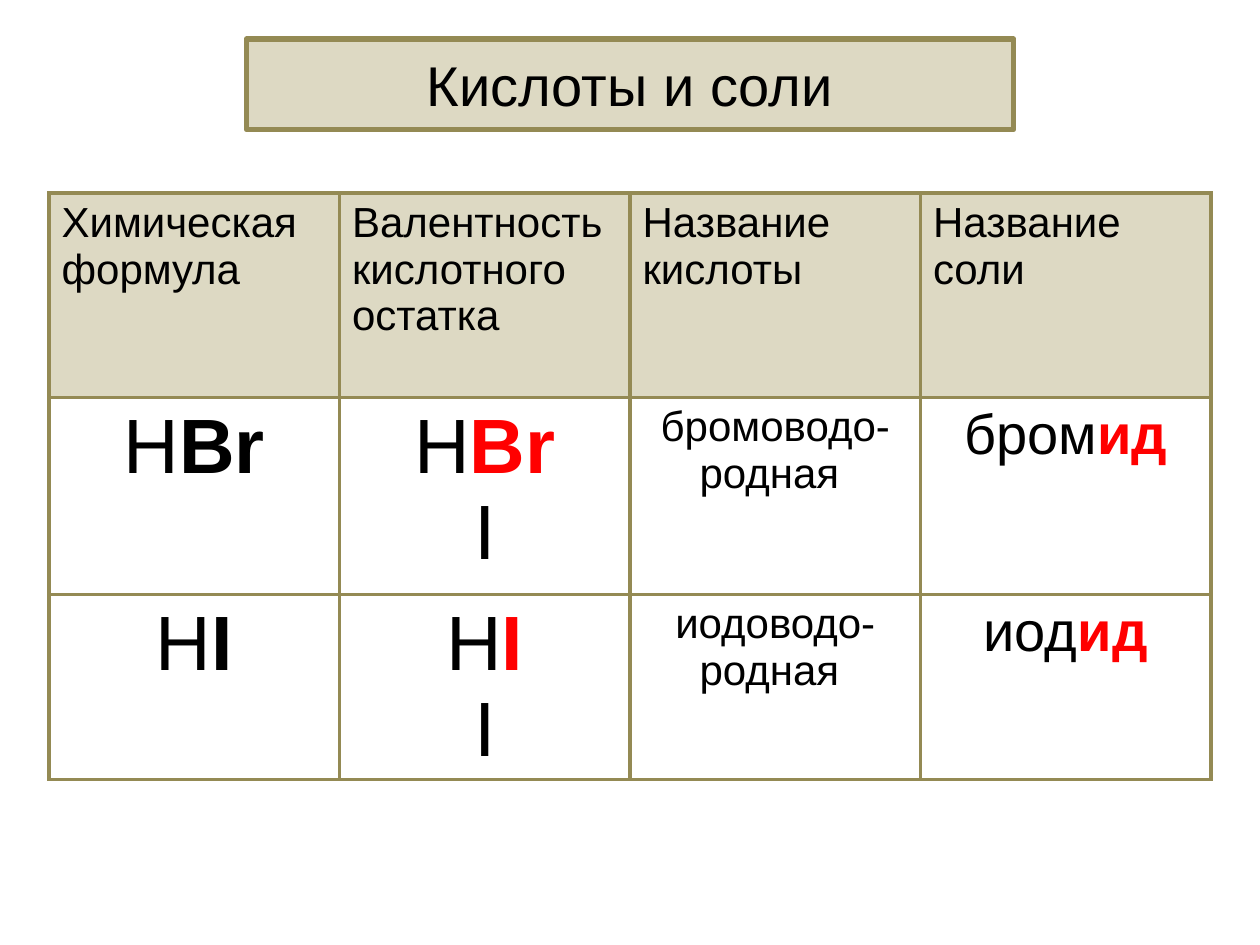
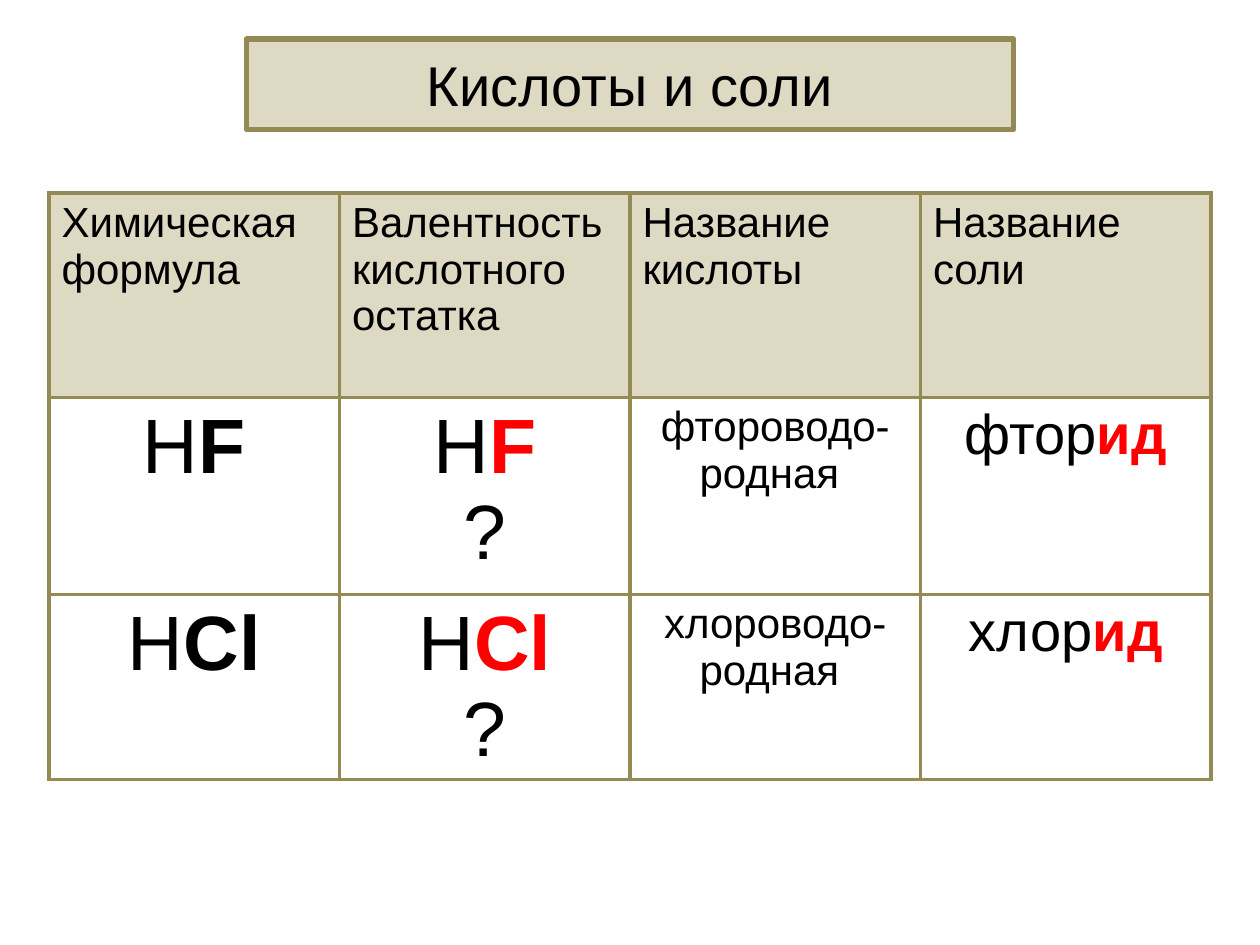
import pptx
import pptx.dml.color
import pptx.enum.shapes
import pptx.enum.text
import pptx.oxml
import pptx.oxml.ns
import pptx.util

Pt = pptx.util.Pt
RGBColor = pptx.dml.color.RGBColor
ALIGN = pptx.enum.text.PP_ALIGN

# Content: each acid is (residue, valency, root of the names)
TITLE = "Кислоты и соли"
HEADERS = ["Химическая формула", "Валентность кислотного остатка",
           "Название кислоты", "Название соли"]
ACID_ENDING = "оводо-родная "
SALT_ENDING = "ид"
SLIDES = [
    [("Br", "I", "бром"), ("I", "I", "иод")],
    [("F", "?", "фтор"), ("Cl", "?", "хлор")],
]

# Shared style
FONT = "Arial"
BLACK = RGBColor(0x00, 0x00, 0x00)
RED = RGBColor(0xFF, 0x00, 0x00)
SAND = RGBColor(0xDD, 0xD9, 0xC3)
OLIVE = RGBColor(0x94, 0x8A, 0x54)
SMALL, MEDIUM, LARGE = 24, 32, 44

# Layout in points
SLIDE_WIDTH, SLIDE_HEIGHT = 720, 540
TITLE_TOP, TITLE_WIDTH, TITLE_HEIGHT = 22.3, 438.5, 51.8
TABLE_TOP, COLUMN_WIDTH = 110.3, 166
ROW_HEIGHTS = [116.8, 112.6, 105.4]
TITLE_LINE, TABLE_LINE = 3, 2.25


def write(frame, text, size=SMALL, align=ALIGN.CENTER, ending="",
          ending_color=BLACK, second_line=""):
    """Write plain text, a bold ending and an optional plain second line."""
    lines = [[(text, False, BLACK), (ending, True, ending_color)],
             [(second_line, False, BLACK)]]
    for number, pieces in enumerate(lines[:2 if second_line else 1]):
        paragraph = frame.add_paragraph() if number else frame.paragraphs[0]
        paragraph.alignment = align
        for piece, bold, color in pieces:
            if piece:
                run = paragraph.add_run()
                run.text = piece
                run.font.name = FONT
                run.font.size = Pt(size)
                run.font.bold = bold
                run.font.color.rgb = color


def add_title(slide):
    shape = slide.shapes.add_shape(
        pptx.enum.shapes.MSO_SHAPE.ROUNDED_RECTANGLE,
        Pt((SLIDE_WIDTH - TITLE_WIDTH) / 2), Pt(TITLE_TOP),
        Pt(TITLE_WIDTH), Pt(TITLE_HEIGHT))
    shape.adjustments[0] = 0
    shape.shadow.inherit = False
    shape.fill.solid()
    shape.fill.fore_color.rgb = SAND
    shape.line.color.rgb = OLIVE
    shape.line.width = Pt(TITLE_LINE)
    shape.text_frame.word_wrap = True
    shape.text_frame.vertical_anchor = pptx.enum.text.MSO_ANCHOR.MIDDLE
    write(shape.text_frame, TITLE, size=MEDIUM)


def set_borders(cell):
    """Put the four border lines before the fill, as the schema asks."""
    properties = cell._tc.get_or_add_tcPr()
    for index, side in enumerate(("lnL", "lnR", "lnT", "lnB")):
        properties.insert(index, pptx.oxml.parse_xml(
            f'<a:{side} {pptx.oxml.ns.nsdecls("a")} w="{Pt(TABLE_LINE)}">'
            f'<a:solidFill><a:srgbClr val="{OLIVE}"/></a:solidFill>'
            f'</a:{side}>'))


def add_acid_table(slide, acids):
    width = COLUMN_WIDTH * len(HEADERS)
    table = slide.shapes.add_table(
        len(acids) + 1, len(HEADERS), Pt((SLIDE_WIDTH - width) / 2),
        Pt(TABLE_TOP), Pt(width), Pt(sum(ROW_HEIGHTS))).table
    table.first_row = table.horz_banding = False
    for column in table.columns:
        column.width = Pt(COLUMN_WIDTH)
    for row, height in zip(table.rows, ROW_HEIGHTS):
        row.height = Pt(height)

    # Header row
    for column, header in enumerate(HEADERS):
        cell = table.cell(0, column)
        cell.fill.solid()
        cell.fill.fore_color.rgb = SAND
        write(cell.text_frame, header, align=ALIGN.LEFT)

    # One row for each acid
    for row, (residue, valency, root) in enumerate(acids, start=1):
        formula, residue_valency, acid, salt = table.rows[row].cells
        write(formula.text_frame, "H", size=LARGE, ending=residue)
        write(residue_valency.text_frame, "H", size=LARGE, ending=residue,
              ending_color=RED, second_line=valency)
        write(acid.text_frame, root + ACID_ENDING)
        write(salt.text_frame, root, size=MEDIUM, ending=SALT_ENDING,
              ending_color=RED)
        for cell in (formula, residue_valency, acid, salt):
            cell.fill.background()

    for cell in table.iter_cells():
        set_borders(cell)


def main():
    presentation = pptx.Presentation()
    presentation.slide_width = Pt(SLIDE_WIDTH)
    presentation.slide_height = Pt(SLIDE_HEIGHT)
    for acids in SLIDES:
        slide = presentation.slides.add_slide(presentation.slide_layouts[6])
        add_title(slide)
        add_acid_table(slide, acids)
    presentation.save("out.pptx")


if __name__ == "__main__":
    main()
